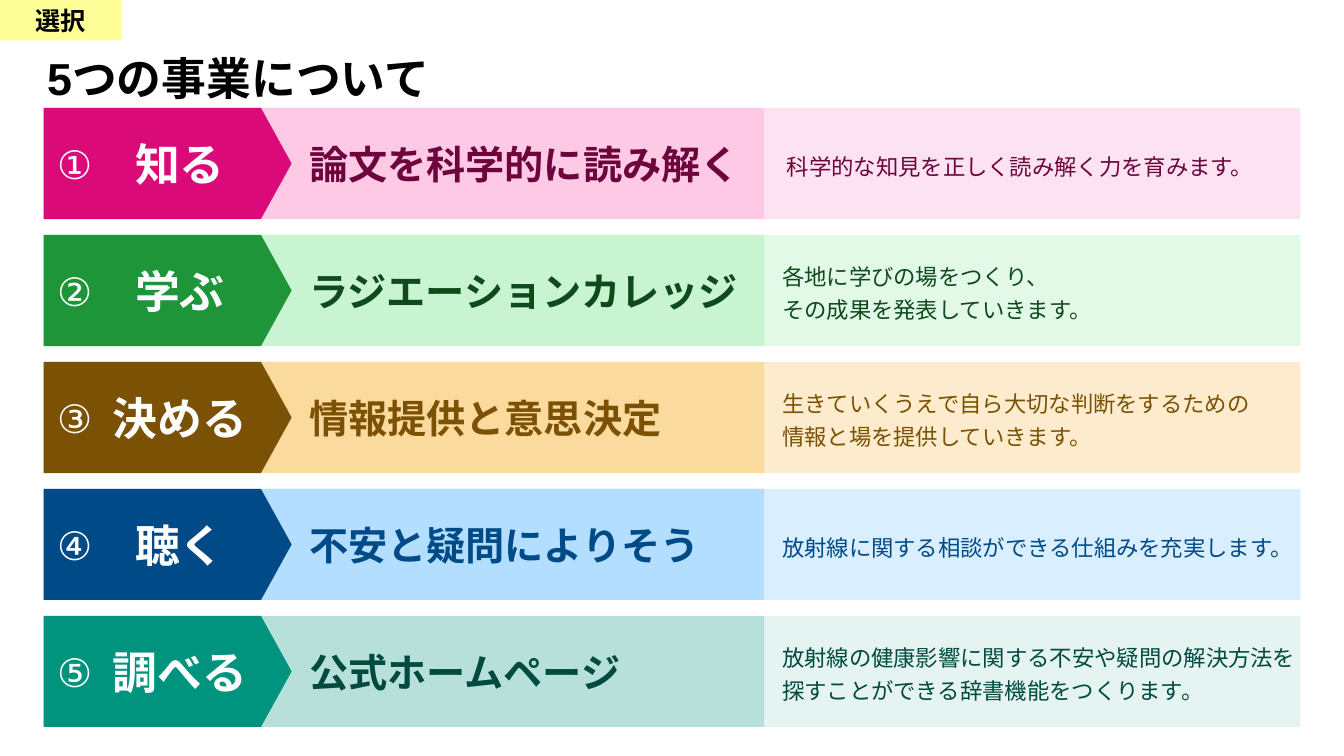
from dataclasses import dataclass

from lxml import etree
from pptx import Presentation
from pptx.dml.color import RGBColor
from pptx.enum.lang import MSO_LANGUAGE_ID
from pptx.enum.shapes import MSO_SHAPE
from pptx.enum.text import MSO_ANCHOR, MSO_AUTO_SIZE, PP_ALIGN
from pptx.oxml.ns import qn
from pptx.util import Cm, Pt

RECTANGLE, PENTAGON = MSO_SHAPE.RECTANGLE, MSO_SHAPE.PENTAGON
LEFT, CENTER = PP_ALIGN.LEFT, PP_ALIGN.CENTER
MIDDLE = MSO_ANCHOR.MIDDLE
GROW, FIXED = MSO_AUTO_SIZE.SHAPE_TO_FIT_TEXT, MSO_AUTO_SIZE.NONE
JAPANESE = MSO_LANGUAGE_ID.JAPANESE

WHITE, BLACK, YELLOW = "FFFFFF", "000000", "FFFF99"
ROW_TOP, ROW_PITCH, ROW_HEIGHT = 2.72, 3.2, 2.8
ROW_LEFT = 1.1
NOTE_HEIGHTS = {1: 1.04, 2: 1.85}


@dataclass
class Business:
    number: str
    verb: str
    heading: str
    note: str
    dark: str
    ink: str
    tint: str
    note_lines: int = 2
    note_left: float = 19.46
    note_width: float = 13.03
    band_opacity: int = 100
    wash_opacity: int = 50


BUSINESSES = [
    Business("①", "知る", "論文を科学的に読み解く",
             "科学的な知見を正しく読み解く力を育みます。",
             "DA0A79", "6D053C", "FDC9E5",
             note_lines=1, note_left=19.58, note_width=12.9),
    Business("②", "学ぶ", "ラジエーションカレッジ",
             "各地に学びの場をつくり、\nその成果を発表していきます。",
             "1E9539", "0F4A1D", "C8F4D2"),
    Business("③", "決める", "情報提供と意思決定",
             "生きていくうえで自ら大切な判断をするための情報と場を提供していきます。",
             "7B5105", "7B5105", "FBDA9D", note_width=12.78),
    Business("④", "聴く", "不安と疑問によりそう",
             "放射線に関する相談ができる仕組みを充実します。",
             "004B87", "004B87", "B4DEFF", note_lines=1),
    Business("⑤", "調べる", "公式ホームページ",
             "放射線の健康影響に関する不安や疑問の解決方法を探すことができる辞書機能をつくります。",
             "00947F", "004A40", "00947F",
             note_width=13.59, band_opacity=20, wash_opacity=10),
]


def color(hex_code):
    return RGBColor.from_string(hex_code)


def write(shape, text, size, ink, bold=False, align=LEFT, spacing=None,
          font="Arial", fit=GROW):
    """Fill the shape with text, one paragraph for each line."""
    frame = shape.text_frame
    frame.word_wrap = True
    frame.auto_size = fit
    frame.vertical_anchor = MIDDLE
    for index, line in enumerate(text.split("\n")):
        para = frame.add_paragraph() if index else frame.paragraphs[0]
        para.alignment = align
        para.line_spacing = spacing
        span = para.add_run()
        span.text = line
        span.font.name = font
        span.font.size = Pt(size)
        span.font.bold = bold
        span.font.color.rgb = color(ink)
        span.font.language_id = JAPANESE


def add_text(shapes, left, top, width, height, text, **style):
    box = shapes.add_textbox(Cm(left), Cm(top), Cm(width), Cm(height))
    write(box, text, **style)


def add_block(shapes, kind, left, top, width, height, fill, opacity=100):
    """Add a borderless shape; opacity is a percentage."""
    block = shapes.add_shape(kind, Cm(left), Cm(top), Cm(width), Cm(height))
    block.shadow.inherit = False
    block.line.fill.background()
    block.fill.solid()
    block.fill.fore_color.rgb = color(fill)
    if opacity < 100:
        tone = block.fill._xPr.find(".//" + qn("a:srgbClr"))
        etree.SubElement(tone, qn("a:alpha"), val=str(opacity * 1000))
    return block


def add_business(page, business, top):
    shapes = page.shapes.add_group_shape().shapes
    middle = top + ROW_HEIGHT / 2

    add_block(shapes, RECTANGLE, ROW_LEFT + 0.02, top, 31.65, ROW_HEIGHT,
              business.tint, business.wash_opacity)
    add_block(shapes, RECTANGLE, ROW_LEFT, top, 18.16, ROW_HEIGHT,
              business.tint, business.band_opacity)
    arrow = add_block(shapes, PENTAGON, ROW_LEFT, top, 6.25, ROW_HEIGHT,
                      business.dark)
    arrow.adjustments[0] = 0.276

    def add_centered(left, width, height, text, **style):
        add_text(shapes, left, middle - height / 2, width, height, text, **style)

    add_centered(2.54, 3.99, 1.63, business.verb,
                 size=32, ink=WHITE, bold=True, align=CENTER)
    add_centered(1.19, 1.37, 1.45, business.number,
                 size=28, ink=WHITE, align=CENTER)
    add_centered(7.54, 11.46, 1.45, business.heading,
                 size=28, ink=business.ink, bold=True)
    add_centered(business.note_left, business.note_width,
                 NOTE_HEIGHTS[business.note_lines], business.note,
                 size=16, ink=business.ink, spacing=1.2)


def main():
    deck = Presentation()
    deck.slide_width, deck.slide_height = Cm(33.87), Cm(19.05)
    page = deck.slides.add_slide(deck.slide_layouts[6])

    add_text(page.shapes, 0.94, 1.02, 32.94, 2.03, "5つの事業について",
             size=32, ink=BLACK, bold=True, spacing=0.9, fit=FIXED)
    for index, business in enumerate(BUSINESSES):
        add_business(page, business, ROW_TOP + index * ROW_PITCH)

    badge = add_block(page.shapes, RECTANGLE, 0, 0, 3.07, 1.02, YELLOW)
    write(badge, "選択", size=18, ink=BLACK, bold=True, align=CENTER,
          font="Noto Sans CJK JP")

    deck.save("out.pptx")


if __name__ == "__main__":
    main()
